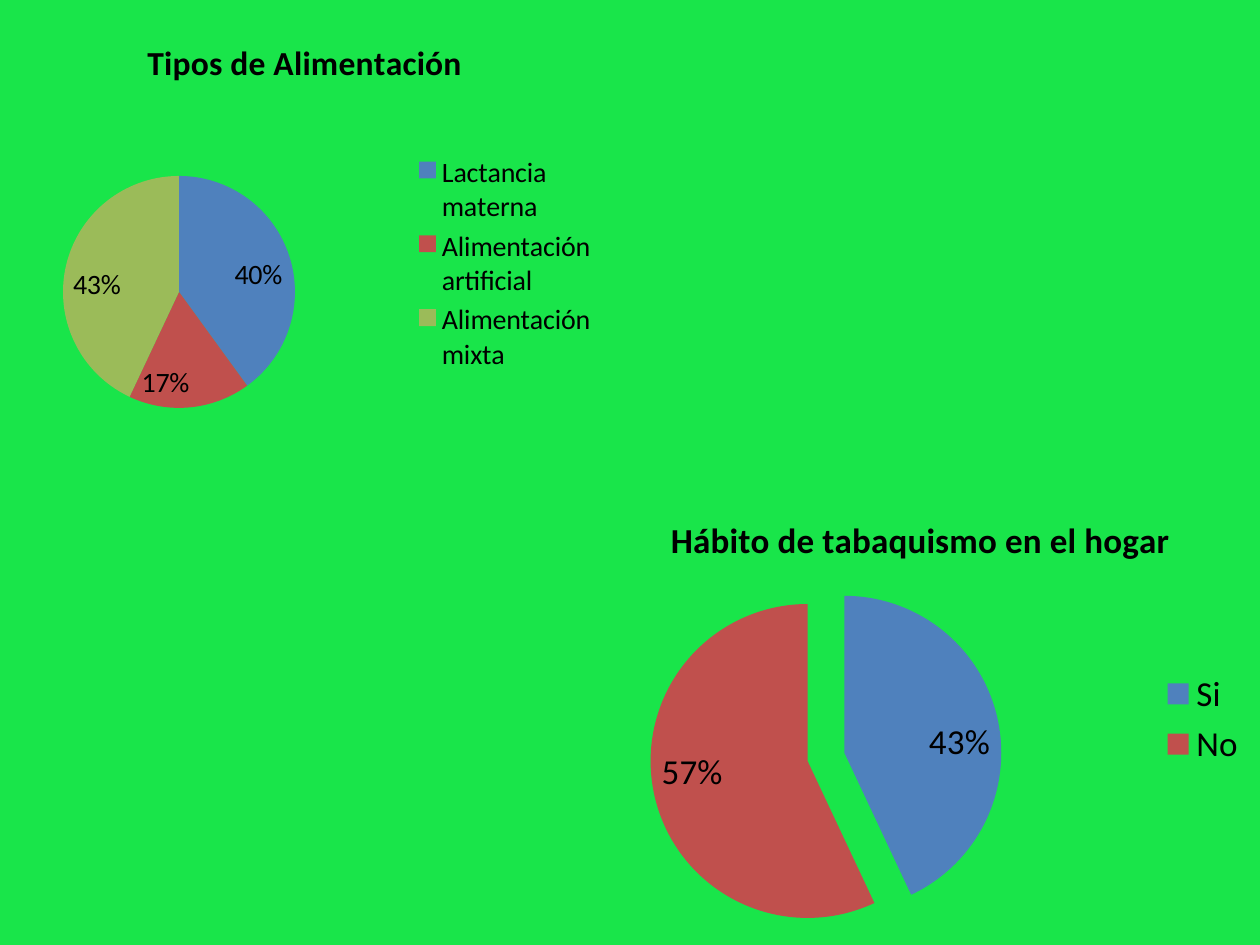
from lxml.etree import SubElement
from pptx import Presentation
from pptx.chart.data import CategoryChartData
from pptx.dml.color import RGBColor
from pptx.enum.chart import XL_CHART_TYPE, XL_LABEL_POSITION, XL_LEGEND_POSITION
from pptx.oxml.ns import qn
from pptx.util import Pt

SCALE = 914400 / 126

THEME = {
    "background": "19E54A",
    "ink": "000000",
    "slices": ["4F81BD", "C0504D", "9BBB59"],
    "font": "Calibri",
    "feeding_title": 19.2,
    "feeding_text": 16,
    "smoking_title": 20,
    "smoking_text": 20,
}


def format_text(font, size, bold=False):
    font.name = THEME["font"]
    font.size = Pt(size)
    font.bold = bold
    font.color.rgb = RGBColor.from_string(THEME["ink"])


def place_plot(chart, frame, pie):
    plot_area = chart.plots[0]._element.getparent()
    layout = plot_area.find(qn("c:layout"))
    if layout is None:
        layout = SubElement(plot_area, qn("c:layout"))
        plot_area.insert(0, layout)
    manual = SubElement(layout, qn("c:manualLayout"))
    left, top, width, height = frame
    pie_left, pie_top, side = pie
    settings = {
        "layoutTarget": "inner",
        "xMode": "edge",
        "yMode": "edge",
        "x": round((pie_left - left) / width, 4),
        "y": round((pie_top - top) / height, 4),
        "w": round(side / width, 4),
        "h": round(side / height, 4),
    }
    for name, value in settings.items():
        SubElement(manual, qn(f"c:{name}")).set("val", str(value))


deck = Presentation()
deck.slide_width = round(1260 * SCALE)
deck.slide_height = round(945 * SCALE)
page = deck.slides.add_slide(deck.slide_layouts[6])
page.background.fill.solid()
page.background.fill.fore_color.rgb = RGBColor.from_string(THEME["background"])

pies = [
    {
        "key": "feeding",
        "title": "Tipos de Alimentación",
        "shares": {"Lactancia materna": 40, "Alimentación artificial": 17, "Alimentación mixta": 43},
        "frame": (0, 16, 610, 496),
        "pie": (63, 176, 232),
        "explosion": 0,
    },
    {
        "key": "smoking",
        "title": "Hábito de tabaquismo en el hogar",
        "shares": {"Si": 43, "No": 57},
        "frame": (581, 493, 679, 452),
        "pie": (669, 600, 314),
        "explosion": 12,
    },
]

for item in pies:
    title_size = THEME[item["key"] + "_title"]
    text_size = THEME[item["key"] + "_text"]
    data = CategoryChartData()
    data.categories = list(item["shares"])
    data.add_series("Series 1", list(item["shares"].values()))
    bounds = [round(length * SCALE) for length in item["frame"]]
    chart = page.shapes.add_chart(XL_CHART_TYPE.PIE, *bounds, data).chart
    format_text(chart.font, text_size)

    chart.has_title = True
    chart.chart_title.include_in_layout = False
    para = chart.chart_title.text_frame.paragraphs[0]
    span = para.add_run()
    span.text = item["title"]
    format_text(span.font, title_size, bold=True)

    chart.has_legend = True
    chart.legend.position = XL_LEGEND_POSITION.RIGHT
    chart.legend.include_in_layout = False
    format_text(chart.legend.font, text_size)

    plot = chart.plots[0]
    plot.vary_by_categories = True
    plot.has_data_labels = True
    labels = plot.data_labels
    labels.show_percentage = True
    labels.show_value = False
    labels.number_format = "0%"
    labels.number_format_is_linked = False
    labels.position = XL_LABEL_POSITION.INSIDE_END
    format_text(labels.font, text_size)

    series = plot.series[0]
    for index, color in enumerate(THEME["slices"][:len(item["shares"])]):
        point = series.points[index]
        point.format.fill.solid()
        point.format.fill.fore_color.rgb = RGBColor.from_string(color)
        point.format.line.fill.background()
        if item["explosion"]:
            slice_xml = series._element.findall(qn("c:dPt"))[index]
            explosion = SubElement(slice_xml, qn("c:explosion"))
            explosion.set("val", str(item["explosion"]))
            slice_xml.find(qn("c:spPr")).addprevious(explosion)

    place_plot(chart, item["frame"], item["pie"])

deck.save("out.pptx")
